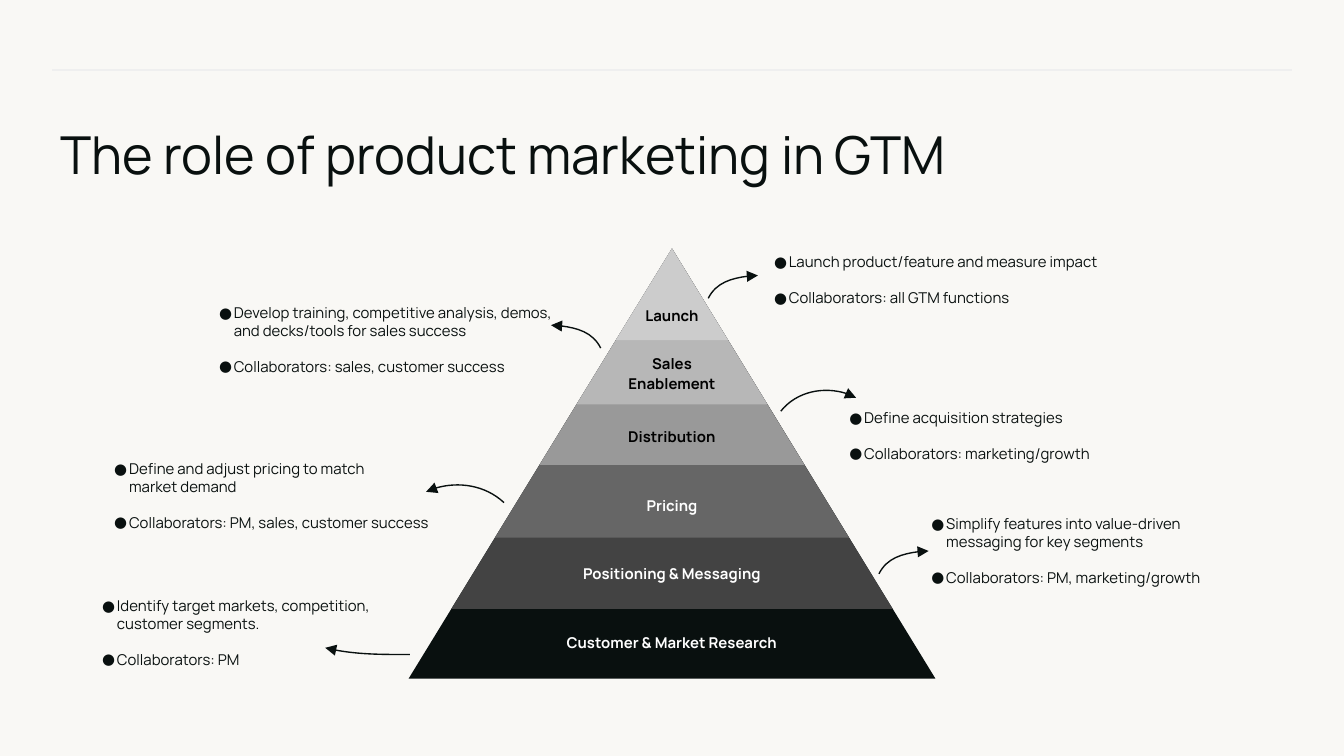
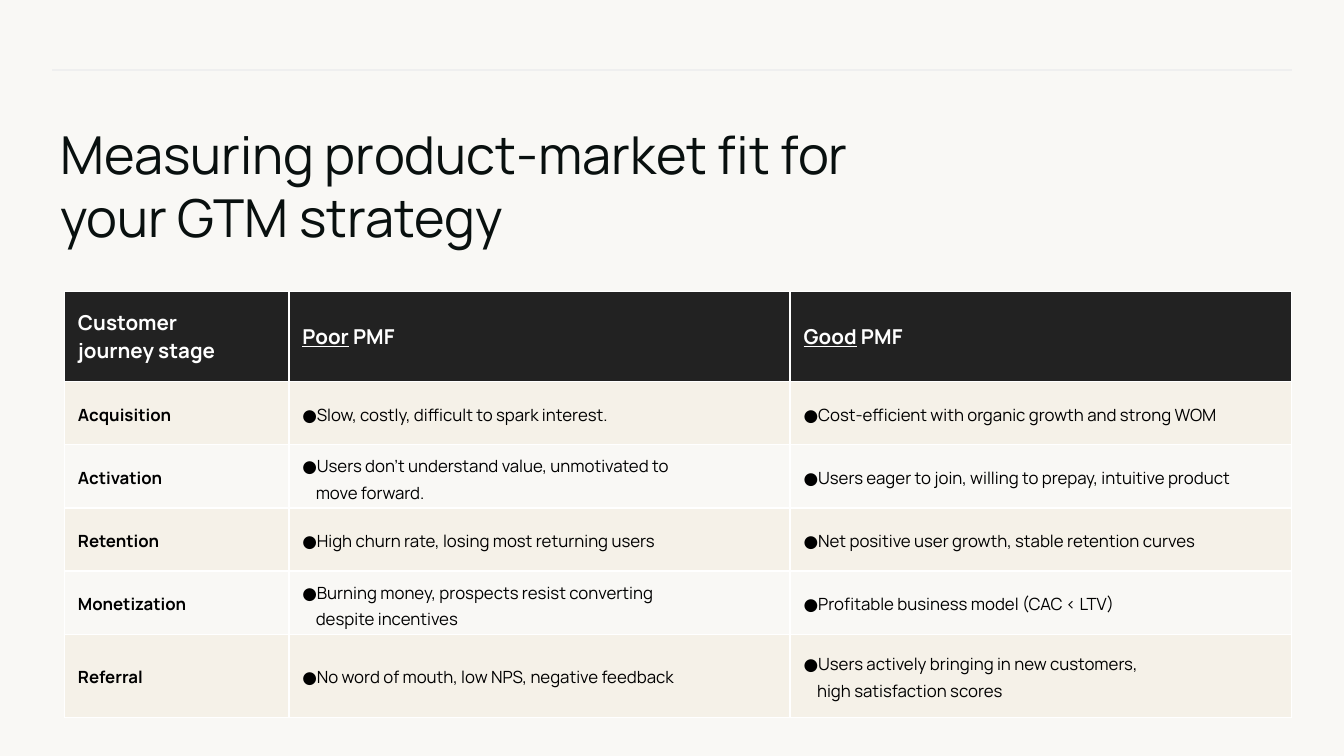
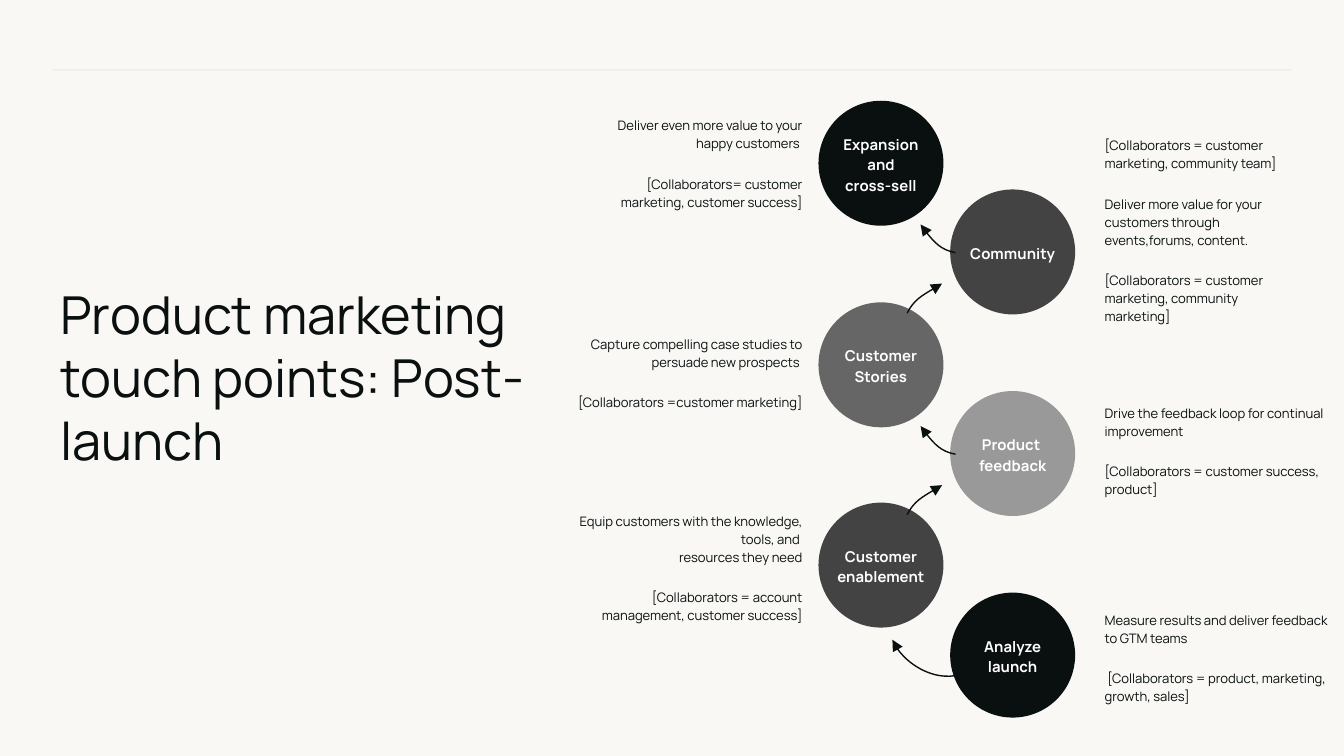
from lxml import etree
from pptx import Presentation
from pptx.dml.color import RGBColor
from pptx.enum.shapes import MSO_CONNECTOR, MSO_SHAPE
from pptx.enum.text import MSO_ANCHOR, PP_ALIGN
from pptx.oxml.ns import qn
from pptx.util import Inches, Pt

LEFT, CENTER, RIGHT = PP_ALIGN.LEFT, PP_ALIGN.CENTER, PP_ALIGN.RIGHT
TOP, MIDDLE = MSO_ANCHOR.TOP, MSO_ANCHOR.MIDDLE
TRIANGLE, OVAL = MSO_SHAPE.ISOSCELES_TRIANGLE, MSO_SHAPE.OVAL
STRAIGHT = MSO_CONNECTOR.STRAIGHT

FONT = "Manrope"
PAPER = RGBColor(0xF9, 0xF8, 0xF5)
RULE = RGBColor(0xEF, 0xEF, 0xEF)
INK = RGBColor(0x09, 0x10, 0x0F)
BLACK = RGBColor(0, 0, 0)
WHITE = RGBColor(0xFF, 0xFF, 0xFF)
HEADER = RGBColor(0x22, 0x22, 0x22)
CREAM = RGBColor(0xF5, 0xF1, 0xE8)
GRAY_1 = RGBColor(0x43, 0x43, 0x43)
GRAY_2 = RGBColor(0x66, 0x66, 0x66)
GRAY_3 = RGBColor(0x99, 0x99, 0x99)
GRAY_4 = RGBColor(0xB7, 0xB7, 0xB7)
GRAY_5 = RGBColor(0xCC, 0xCC, 0xCC)

COLUMNS, ROWS = 100, 56.25
CELL = Inches(0.1)


def grid(*cells):
    """Turn counts of grid cells into lengths."""
    return [round(n * CELL) for n in cells]


def add_bullet(p, color, left, hanging):
    pPr = p._p.get_or_add_pPr()
    left, hanging = grid(left, hanging)
    pPr.set("marL", str(left))
    pPr.set("indent", str(-hanging))
    bu_color = etree.SubElement(pPr, qn("a:buClr"))
    etree.SubElement(bu_color, qn("a:srgbClr"), val=str(color))
    etree.SubElement(pPr, qn("a:buFont"), typeface=FONT)
    etree.SubElement(pPr, qn("a:buChar"), char="●")


def write(tf, paragraphs, size=8, color=INK, bold=False, align=LEFT,
          spacing=None, before=0, between=0, after=0, bullet=None,
          underlined=""):
    """Fill a text frame; bullet is (left, hanging), underlined a leading word."""
    last = len(paragraphs) - 1
    for i, text in enumerate(paragraphs):
        p = tf.add_paragraph() if i else tf.paragraphs[0]
        p.alignment = align
        if spacing:
            p.line_spacing = spacing
        p.space_before = Pt(before)
        p.space_after = Pt(after if i == last else between)
        if bullet:
            add_bullet(p, color, *bullet)
        for n, line in enumerate(text.split("\n")):
            if n:
                p.add_line_break()
            for part in (underlined, line.removeprefix(underlined)):
                if not part:
                    continue
                r = p.add_run()
                r.text = part
                r.font.name = FONT
                r.font.size = Pt(size)
                r.font.bold = bold
                r.font.color.rgb = color
                if part == underlined:
                    r.font.underline = True


def add_text(s, box, paragraphs, anchor=TOP, **style):
    tf = s.shapes.add_textbox(*grid(*box)).text_frame
    tf.word_wrap = True
    tf.margin_left = tf.margin_top = tf.margin_right = tf.margin_bottom = 0
    tf.vertical_anchor = anchor
    write(tf, paragraphs, **style)


def add_label(s, box, text, color=WHITE):
    add_text(s, box, [text], anchor=MIDDLE, color=color, bold=True,
             align=CENTER, spacing=1.15, before=12, after=12)


def add_solid(s, kind, box, color):
    sp = s.shapes.add_shape(kind, *grid(*box))
    sp.shadow.inherit = False
    sp.fill.solid()
    sp.fill.fore_color.rgb = color
    sp.line.fill.background()


def add_curved_arrow(s, points):
    """Draw a cubic curve whose arrowhead sits on the last of four points."""
    start, *rest = [grid(*point) for point in points]
    builder = s.shapes.build_freeform(*start)
    builder.add_line_segments(rest, close=False)
    sp = builder.convert_to_shape()
    sp.shadow.inherit = False
    sp.fill.background()
    sp.line.color.rgb = INK
    sp.line.width = Pt(0.75)
    etree.SubElement(sp.line._get_or_add_ln(), qn("a:tailEnd"), type="triangle")
    outline = next(sp._element.iter(qn("a:path")))
    curve = etree.SubElement(outline, qn("a:cubicBezTo"))
    for segment in outline.findall(qn("a:lnTo")):
        curve.append(segment[0])
        outline.remove(segment)


def add_slide(prs, title, top, width):
    s = prs.slides.add_slide(prs.slide_layouts[6])
    s.background.fill.solid()
    s.background.fill.fore_color.rgb = PAPER
    rule = s.shapes.add_connector(STRAIGHT, *grid(COLUMNS - 3.9, 5.2, 3.9, 5.2))
    rule.line.color.rgb = RULE
    rule.line.width = Pt(0.75)
    etree.SubElement(rule._element.spPr, qn("a:effectLst"))
    add_text(s, (4.5, top, width, 5.1), [title], size=28, after=10)
    return s


def build_pyramid(prs):
    s = add_slide(prs, "The role of product marketing in GTM", 9.1, 92.3)
    apex, slope = 18.5, 1.225
    tiers = [  # base of the tier, fill, label, its top, width and colour
        (50.5, INK, "Customer & Market Research", 46.2, 21.1, WHITE),
        (45.3, GRAY_1, "Positioning & Messaging", 41.1, 16.2, WHITE),
        (40, GRAY_2, "Pricing", 36, 16.2, WHITE),
        (34.6, GRAY_3, "Distribution", 30.9, 16.2, BLACK),
        (30.1, GRAY_4, "Sales\nEnablement", 26.2, 16.2, BLACK),
        (25.3, GRAY_5, "Launch", 21.9, 16.2, BLACK),
    ]
    for base, fill, *_ in tiers:
        height = base - apex
        width = height * slope
        add_solid(s, TRIANGLE, ((COLUMNS - width) / 2, apex, width, height), fill)
    for _, _, label, top, width, color in tiers:
        add_label(s, ((COLUMNS - width) / 2, top, width, 3), label, color)

    notes = [
        ((55.7, 18.8, 32.3, 4), "Launch product/feature and measure impact",
         "all GTM functions"),
        ((61.3, 30.4, 24.5, 4), "Define acquisition strategies",
         "marketing/growth"),
        ((67.4, 38.3, 24.1, 5.4),
         "Simplify features into value-driven messaging for key segments",
         "PM, marketing/growth"),
        ((14.4, 22.6, 28.3, 5.4),
         "Develop training, competitive analysis, demos, and decks/tools "
         "for sales success", "sales, customer success"),
        ((6.6, 34.2, 28.8, 5.4),
         "Define and adjust pricing to match \nmarket demand ",
         "PM, sales, customer success"),
        ((5.7, 44.4, 26.1, 5.4),
         "Identify target markets, competition, customer segments.", "PM"),
    ]
    for box, task, collaborators in notes:
        add_text(s, box, [task, f"Collaborators: {collaborators}"],
                 between=9.6, bullet=(3, 1.1))

    for x, y, way in ((52.7, 22.2, 1), (44.7, 25.9, -1), (65.4, 42.7, 1)):
        add_curved_arrow(s, [(x, y), (x + 0.6 * way, y - 1.2),
                             (x + 2.4 * way, y - 1.7), (x + 3.7 * way, y - 1.7)])
    add_curved_arrow(s, [(37.5, 37.4), (36.1, 36.1), (33.5, 35.7), (31.7, 36.6)])
    add_curved_arrow(s, [(30.5, 48.7), (28.4, 48.7), (26.2, 48.7), (24.2, 48.2)])
    add_curved_arrow(s, [(58.1, 30.6), (59.3, 29.1), (62, 28.6), (63.7, 29.6)])


def format_cell(cell, fill, padding, top_border=0.75):
    cell.vertical_anchor = MIDDLE
    cell.margin_left = cell.margin_right = CELL
    cell.margin_top, cell.margin_bottom = grid(padding, padding)
    tcPr = cell._tc.get_or_add_tcPr()
    for side, width in (("L", 1), ("R", 1), ("T", top_border), ("B", 0.75)):
        ln = etree.SubElement(tcPr, qn(f"a:ln{side}"), w=str(Pt(width)))
        solid = etree.SubElement(ln, qn("a:solidFill"))
        etree.SubElement(solid, qn("a:srgbClr"), val=str(WHITE))
    cell.fill.solid()
    cell.fill.fore_color.rgb = fill


def build_fit_table(prs):
    s = add_slide(prs, "Measuring product-market fit for your GTM strategy",
                  9.1, 60.3)
    stages = [
        ("Acquisition", "Slow, costly, difficult to spark interest.",
         "Cost-efficient with organic growth and strong WOM"),
        ("Activation",
         "Users don’t understand value, unmotivated to \nmove forward.",
         "Users eager to join, willing to prepay, intuitive product"),
        ("Retention", "High churn rate, losing most returning users",
         "Net positive user growth, stable retention curves"),
        ("Monetization",
         "Burning money, prospects resist converting \ndespite incentives",
         "Profitable business model (CAC < LTV)"),
        ("Referral", "No word of mouth, low NPS, negative feedback",
         "Users actively bringing in new customers, \nhigh satisfaction scores"),
    ]
    widths = grid(16.7, 37.3, 37.3)
    heights = grid(6.7, 4.7, 4.7, 4.7, 4.7, 6.2)
    table = s.shapes.add_table(len(heights), len(widths), *grid(4.8, 21.7),
                               sum(widths), sum(heights)).table
    for column, width in zip(table.columns, widths):
        column.width = width
    for row, height in zip(table.rows, heights):
        row.height = height

    headings = [(["Customer", "journey stage"], ""),
                (["Poor PMF"], "Poor"), (["Good PMF"], "Good")]
    for c, (lines, underlined) in enumerate(headings):
        cell = table.cell(0, c)
        format_cell(cell, HEADER, 1, top_border=1)
        write(cell.text_frame, lines, size=11, color=WHITE, bold=True,
              underlined=underlined)
    for r, stage in enumerate(stages, 1):
        for c, text in enumerate(stage):
            cell = table.cell(r, c)
            format_cell(cell, CREAM if r % 2 else PAPER, 0.5)
            write(cell.text_frame, [text], size=9, color=BLACK, bold=c == 0,
                  spacing=1.15, bullet=(1, 1.1) if c else None)


def build_touch_points(prs):
    s = add_slide(prs, "Product marketing touch points: Post-launch", 21, 36.1)
    size, left, right = 9.3, 60.9, 70.7
    circles = [
        (left, 7.5, INK, "Expansion\nand\ncross-sell"),
        (right, 14.1, GRAY_1, "Community"),
        (left, 22.5, GRAY_2, "Customer Stories"),
        (left, 37.4, GRAY_1, "Customer enablement"),
        (right, 29.1, GRAY_3, "Product \nfeedback"),
        (right, 44.1, INK, "Analyze\nlaunch"),
    ]
    for x, y, fill, _ in circles:
        add_solid(s, OVAL, (x, y, size, size), fill)
    for y in (16.7, 31.7):
        add_curved_arrow(s, [(71.1, y + 2.1), (70, y + 1.9),
                             (69.1, y + 0.9), (68.5, y)])
        add_curved_arrow(s, [(67.5, y + 6.6), (68, y + 5.6),
                             (69.1, y + 5), (70.1, y + 4.4)])
    add_curved_arrow(s, [(71.7, 50.1), (69.9, 50.8), (67.1, 49.4), (66.4, 47.6)])
    for x, y, _, label in circles:
        width, height = (9.3, 5.9) if x == left else (10.1, 5.1)
        add_label(s, (x + (size - width) / 2, y + (size - height) / 2,
                      width, height), label)

    notes = [
        (44.3, 8.5, 15.4, RIGHT,
         ["Deliver even more value to your happy customers ",
          "[Collaborators= customer marketing, customer success]"]),
        (43, 24.1, 16.7, RIGHT,
         ["Capture compelling case studies to persuade new prospects ",
          "[Collaborators =customer marketing]"]),
        (43, 38.6, 16.7, RIGHT,
         ["Equip customers with the knowledge, tools, and \nresources they need",
          "[Collaborators = account management, customer success]"]),
        (82.2, 13.5, 13, LEFT,
         ["[Collaborators = customer marketing, community team]",
          "Deliver more value for your customers through events,forums, content.",
          "[Collaborators = customer marketing, community marketing]"]),
        (82.2, 29.9, 16.7, LEFT,
         ["Drive the feedback loop for continual improvement",
          "[Collaborators = customer success, product]"]),
        (82.2, 45.3, 16.7, LEFT,
         ["Measure results and deliver feedback to GTM teams",
          " [Collaborators = product, marketing, growth, sales]"]),
    ]
    for x, y, width, align, paragraphs in notes:
        add_text(s, (x, y, width, 7.2), paragraphs, anchor=MIDDLE, size=7,
                 align=align, spacing=1.15, before=12, after=12)


def main():
    prs = Presentation()
    prs.slide_width, prs.slide_height = grid(COLUMNS, ROWS)
    build_pyramid(prs)
    build_fit_table(prs)
    build_touch_points(prs)
    prs.save("out.pptx")


if __name__ == "__main__":
    main()
